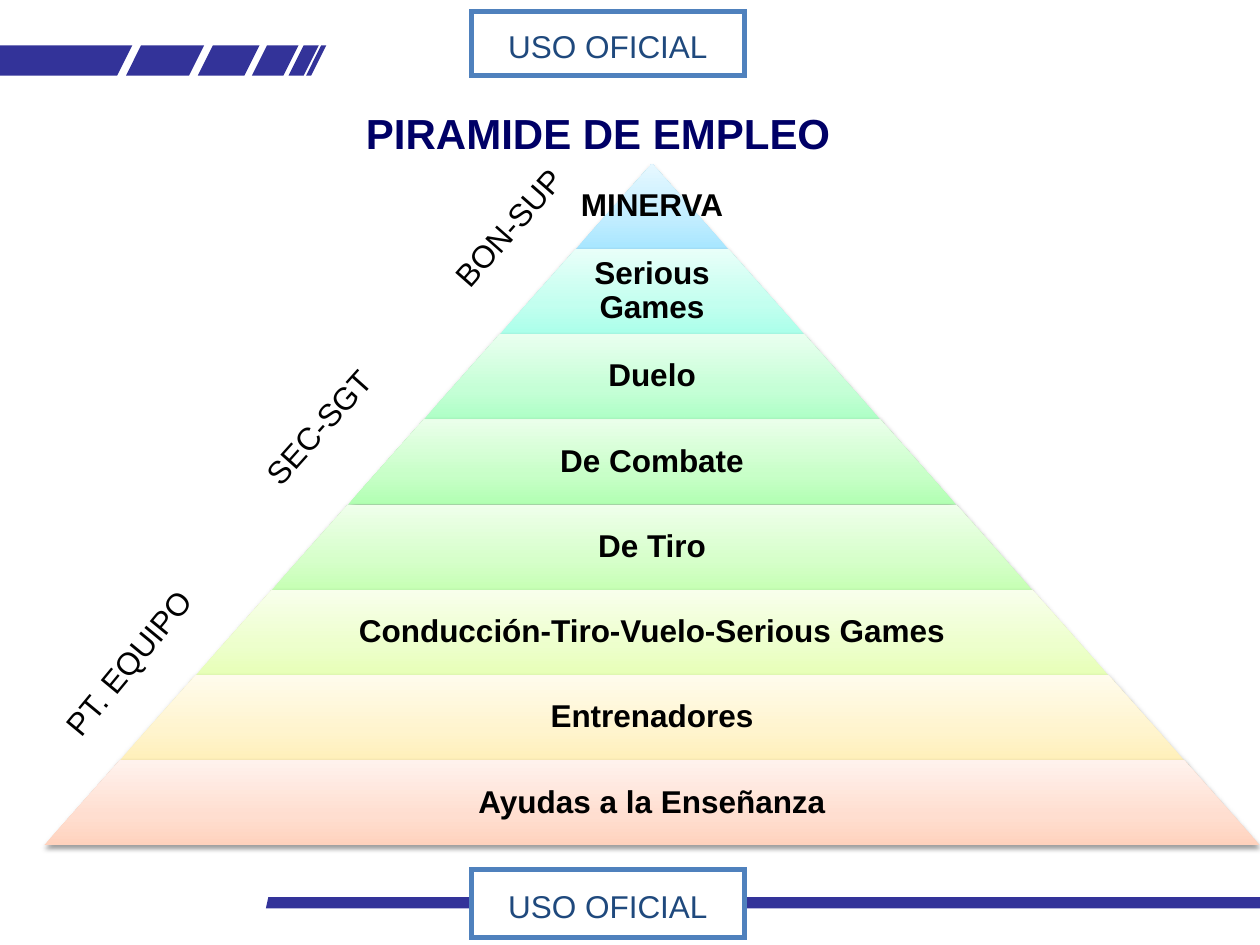
from copy import deepcopy

from lxml import etree
from pptx import Presentation
from pptx.dml.color import RGBColor
from pptx.enum.shapes import MSO_SHAPE
from pptx.enum.text import MSO_ANCHOR, MSO_AUTO_SIZE, PP_ALIGN
from pptx.oxml import parse_xml
from pptx.oxml.ns import nsdecls, qn
from pptx.util import Inches, Pt

COLORS = {"band": "333399", "frame": "4F81BD", "mark": "1F497D",
          "title": "000066", "text": "000000", "paper": "FFFFFF"}
FONT = "Arial"

TITLE = "PIRAMIDE DE EMPLEO"
MARK = "USO OFICIAL"
MARK_BOXES = [(6.9, 0.54), (0.09, 0.51)]  # top, height

# Label and gradient from the bottom edge to the top edge
LEVELS = [
    ("MINERVA", ("A7E6FF", "C1EDFF", "E7F8FF")),
    ("Serious Games", ("AAFFEA", "C3FFEF", "E8FFF9")),
    ("Duelo", ("AEFFC6", "C5FFD6", "E9FFEF")),
    ("De Combate", ("B1FFB2", "C8FFC8", "EAFFEA")),
    ("De Tiro", ("C6FFB4", "D6FFCA", "EFFFEB")),
    ("Conducción-Tiro-Vuelo-Serious Games", ("E7FFB7", "EDFFCC", "F8FFEC")),
    ("Entrenadores", ("FFF0BA", "FFF4CE", "FFFBEC")),
    ("Ayudas a la Enseñanza", ("FFD2BD", "FFDED0", "FFF2ED")),
]
STOP_POSITIONS = (0, 0.35, 1)
PYRAMID_LEFT, PYRAMID_TOP, PYRAMID_WIDTH, PYRAMID_HEIGHT = 0.35, 1.3, 9.65, 5.41
LABEL_SHARE = 0.65  # label width as a share of its level, below the tip

SIDE_LABELS = [  # text, left, top, width, rotation
    ("PT. EQUIPO", 0.21, 5.05, 1.62, 309.5),
    ("SEC-SGT", 1.87, 3.18, 1.32, 311.8),
    ("BON-SUP", 3.36, 1.6, 1.35, 311.4),
]

BAND_TOP, BAND_BOTTOM, SLANT = 0.36, 0.6, 0.12
SLANTED_BANDS = [(1, 1.5), (1.57, 1.94), (2, 2.25), (2.29, 2.41), (2.43, 2.47)]
BAND_OUTLINES = [
    [(0, BAND_TOP), (1.05, BAND_TOP), (0.93, BAND_BOTTOM), (0, BAND_BOTTOM)],
    *[[(left + SLANT, BAND_TOP), (left, BAND_BOTTOM),
       (right, BAND_BOTTOM), (right + SLANT, BAND_TOP)]
      for left, right in SLANTED_BANDS],
    [(2.11, 7.21), (10, 7.21), (10, 7.12), (2.13, 7.12)],
]


def rgb(name):
    return RGBColor.from_string(COLORS[name])


def write(shape, text, color="text", size=18, bold=False,
          align=PP_ALIGN.CENTER, margins=(0.1, 0.05, 0.1, 0.05), wrap=True):
    frame = shape.text_frame
    frame.word_wrap = wrap
    frame.auto_size = MSO_AUTO_SIZE.NONE
    frame.vertical_anchor = MSO_ANCHOR.MIDDLE
    (frame.margin_left, frame.margin_top,
     frame.margin_right, frame.margin_bottom) = map(Inches, margins)
    para = frame.paragraphs[0]
    para.alignment = align
    span = para.add_run()
    span.text = text
    span.font.name = FONT
    span.font.size = Pt(size)
    span.font.bold = bold
    span.font.color.rgb = rgb(color)
    return para


def add_band(page, points):
    corners = [(Inches(x), Inches(y)) for x, y in points]
    builder = page.shapes.build_freeform(*corners[0])
    builder.add_line_segments(corners[1:], close=True)
    band = builder.convert_to_shape()
    band.shadow.inherit = False
    band.fill.solid()
    band.fill.fore_color.rgb = rgb("band")
    band.line.fill.background()


def add_mark(page, top, height):
    box = page.shapes.add_shape(MSO_SHAPE.RECTANGLE, Inches(3.74), Inches(top),
                                Inches(2.17), Inches(height))
    box.shadow.inherit = False
    box.fill.solid()
    box.fill.fore_color.rgb = rgb("paper")
    box.line.color.rgb = rgb("frame")
    box.line.width = Pt(3)
    outline = box._element.spPr.find(qn("a:ln"))
    etree.SubElement(outline, qn("a:miter"), lim="800000")
    write(box, MARK, "mark", margins=(0.1, 0.09, 0.1, 0.05))


def fill_gradient(shape, colors):
    shape.fill.gradient()
    shape.fill.gradient_angle = 90
    stop_list = shape._element.spPr.find(".//" + qn("a:gsLst"))
    stop_list.insert(1, deepcopy(stop_list[0]))
    for stop, color, position in zip(shape.fill.gradient_stops, colors, STOP_POSITIONS):
        stop.color.rgb = RGBColor.from_string(color)
        stop.position = position


def add_soft_shadow(shape):
    shape.shadow.inherit = False
    effects = shape._element.spPr.find(qn("a:effectLst"))
    shadow = parse_xml(
        f'<a:outerShdw {nsdecls("a")} blurRad="{Pt(3.1)}" dist="{Pt(1.6)}" '
        'dir="5400000" rotWithShape="0"/>')
    color = etree.SubElement(shadow, qn("a:srgbClr"), val="000000")
    etree.SubElement(color, qn("a:alpha"), val="38000")
    effects.append(shadow)


def add_level(page, index, text, colors):
    height = PYRAMID_HEIGHT / len(LEVELS)
    step = PYRAMID_WIDTH / len(LEVELS)
    center = PYRAMID_LEFT + PYRAMID_WIDTH / 2
    top = PYRAMID_TOP + index * height
    width = step * (index + 1)
    level = page.shapes.add_shape(MSO_SHAPE.TRAPEZOID, Inches(center - width / 2),
                                  Inches(top), Inches(width), Inches(height))
    level.adjustments[0] = step / 2 / height
    fill_gradient(level, colors)
    level.line.fill.background()
    add_soft_shadow(level)

    label_width = width * LABEL_SHARE if index else width
    label = page.shapes.add_textbox(Inches(center - label_width / 2), Inches(top),
                                    Inches(label_width), Inches(height))
    para = write(label, text, bold=True, margins=(0.01, 0.03, 0.01, 0.03))
    para.line_spacing = 0.9


def main():
    deck = Presentation()
    deck.slide_width, deck.slide_height = Inches(10), Inches(7.5)
    page = deck.slides.add_slide(deck.slide_layouts[5])
    page.background.fill.solid()
    page.background.fill.fore_color.rgb = rgb("paper")

    for points in BAND_OUTLINES:
        add_band(page, points)
    for top, height in MARK_BOXES:
        add_mark(page, top, height)
    for index, (text, colors) in enumerate(LEVELS):
        add_level(page, index, text, colors)
    for text, left, top, width, rotation in SIDE_LABELS:
        box = page.shapes.add_textbox(Inches(left), Inches(top), Inches(width), Inches(0.4))
        box.rotation = rotation
        write(box, text, align=PP_ALIGN.LEFT, wrap=False)

    title = page.shapes.title
    title.left, title.top = Inches(2.69), Inches(0.8)
    title.width, title.height = Inches(4), Inches(0.5)
    write(title, TITLE, "title", 24, True, PP_ALIGN.RIGHT, wrap=False)

    deck.save("out.pptx")


if __name__ == "__main__":
    main()
